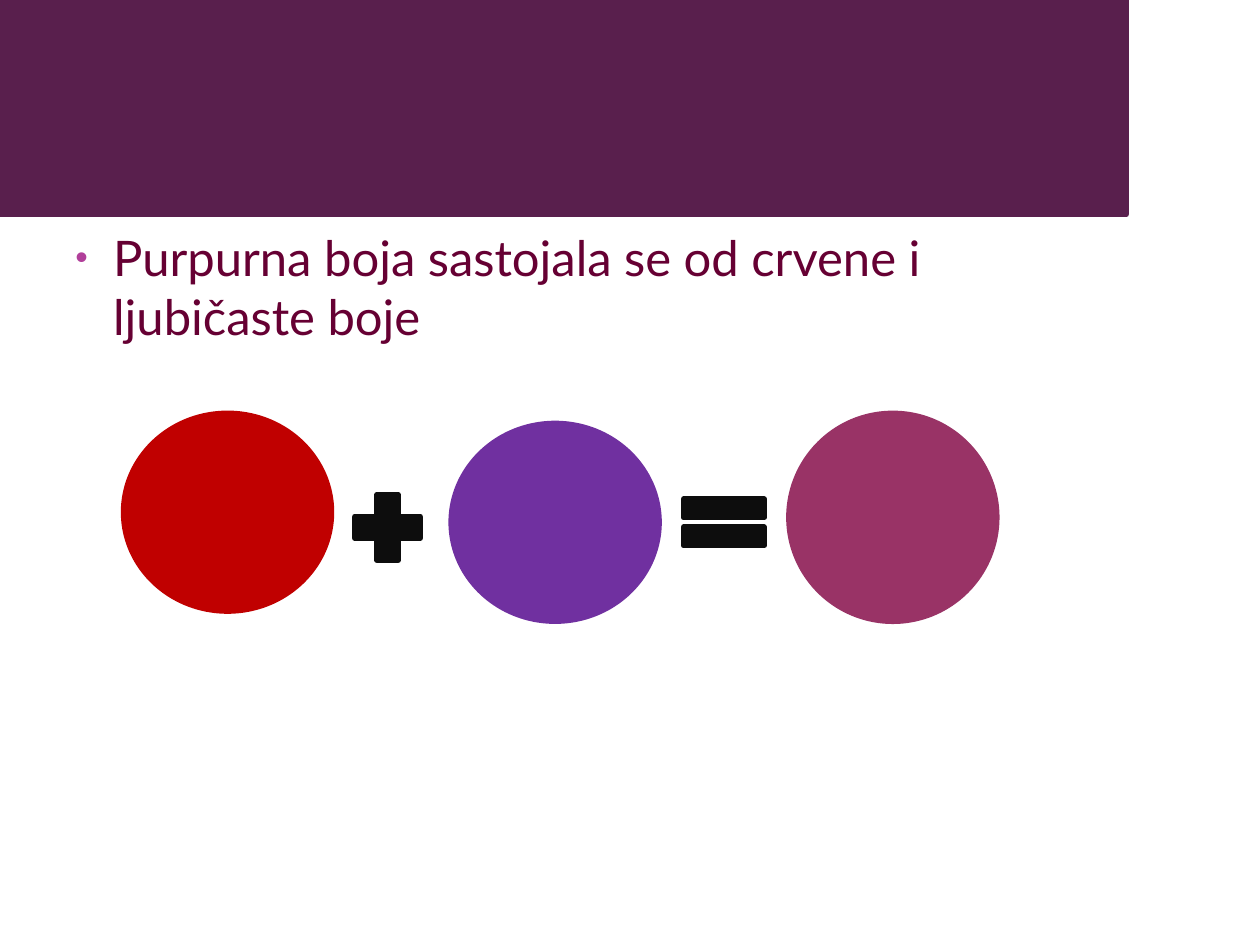
from lxml import etree
from pptx import Presentation
from pptx.dml.color import RGBColor
from pptx.enum.shapes import MSO_SHAPE
from pptx.oxml.ns import qn
from pptx.util import Pt

ELLIPSE = MSO_SHAPE.OVAL
PLUS = MSO_SHAPE.MATH_PLUS
EQUAL = MSO_SHAPE.MATH_EQUAL
BANNER = MSO_SHAPE.FLOWCHART_PROCESS

PLUM = RGBColor(0x59, 0x1F, 0x4D)
WINE = RGBColor(0x66, 0x00, 0x33)
ORCHID = RGBColor(0xB1, 0x3F, 0x9A)
RED = RGBColor(0xC0, 0x00, 0x00)
VIOLET = RGBColor(0x70, 0x30, 0xA0)
PURPLE = RGBColor(0x99, 0x33, 0x66)
BLACK = RGBColor(0x0D, 0x0D, 0x0D)

LINE_WIDTH = 3.15
INDENT = 21.6


def add_solid_shape(slide, kind, left, top, width, height, color):
    shape = slide.shapes.add_shape(kind, Pt(left), Pt(top), Pt(width), Pt(height))
    shape.shadow.inherit = False
    shape.fill.solid()
    shape.fill.fore_color.rgb = color
    shape.line.color.rgb = color
    shape.line.width = Pt(LINE_WIDTH)
    return shape


def add_bullet(paragraph, color):
    properties = paragraph._p.get_or_add_pPr()
    properties.set("marL", str(Pt(INDENT)))
    properties.set("indent", str(-Pt(INDENT)))
    bullet_color = etree.SubElement(properties, qn("a:buClr"))
    etree.SubElement(bullet_color, qn("a:srgbClr"), val=str(color))
    etree.SubElement(properties, qn("a:buSzPct"), val="73000")
    etree.SubElement(properties, qn("a:buFont"), typeface="Arial")
    etree.SubElement(properties, qn("a:buChar"), char="•")


def add_statement(slide, left, top, width, height):
    box = slide.shapes.add_textbox(Pt(left), Pt(top), Pt(width), Pt(height))
    box.text_frame.word_wrap = True
    paragraph = box.text_frame.paragraphs[0]
    paragraph.text = "Purpurna boja sastojala se od crvene i ljubičaste boje"
    add_bullet(paragraph, ORCHID)
    paragraph.font.name = "Lato"
    paragraph.font.size = Pt(28)
    paragraph.font.color.rgb = WINE


def add_color_equation(slide, left, top):
    # Red + violet = purple, as offsets from the top left corner
    parts = [
        (ELLIPSE, 0, 0, 118.8, 113, RED),
        (PLUS, 125.3, 39.6, 51.1, 51.1, BLACK),
        (ELLIPSE, 187.2, 5.8, 118.8, 113, VIOLET),
        (EQUAL, 311.8, 39.6, 62.6, 45.4, BLACK),
        (ELLIPSE, 380.2, 0, 118.8, 118.8, PURPLE),
    ]
    for kind, across, down, width, height, color in parts:
        add_solid_shape(slide, kind, left + across, top + down, width, height, color)


def main():
    presentation = Presentation()
    presentation.slide_width = Pt(720)
    presentation.slide_height = Pt(540)
    slide = presentation.slides.add_slide(presentation.slide_layouts[6])

    add_statement(slide, 36, 126.7, 570.2, 381.6)
    add_color_equation(slide, 70.6, 236.2)
    # Top banner
    add_solid_shape(slide, BANNER, 0, 0, 643.7, 122.4, PLUM)

    presentation.save("out.pptx")


if __name__ == "__main__":
    main()
